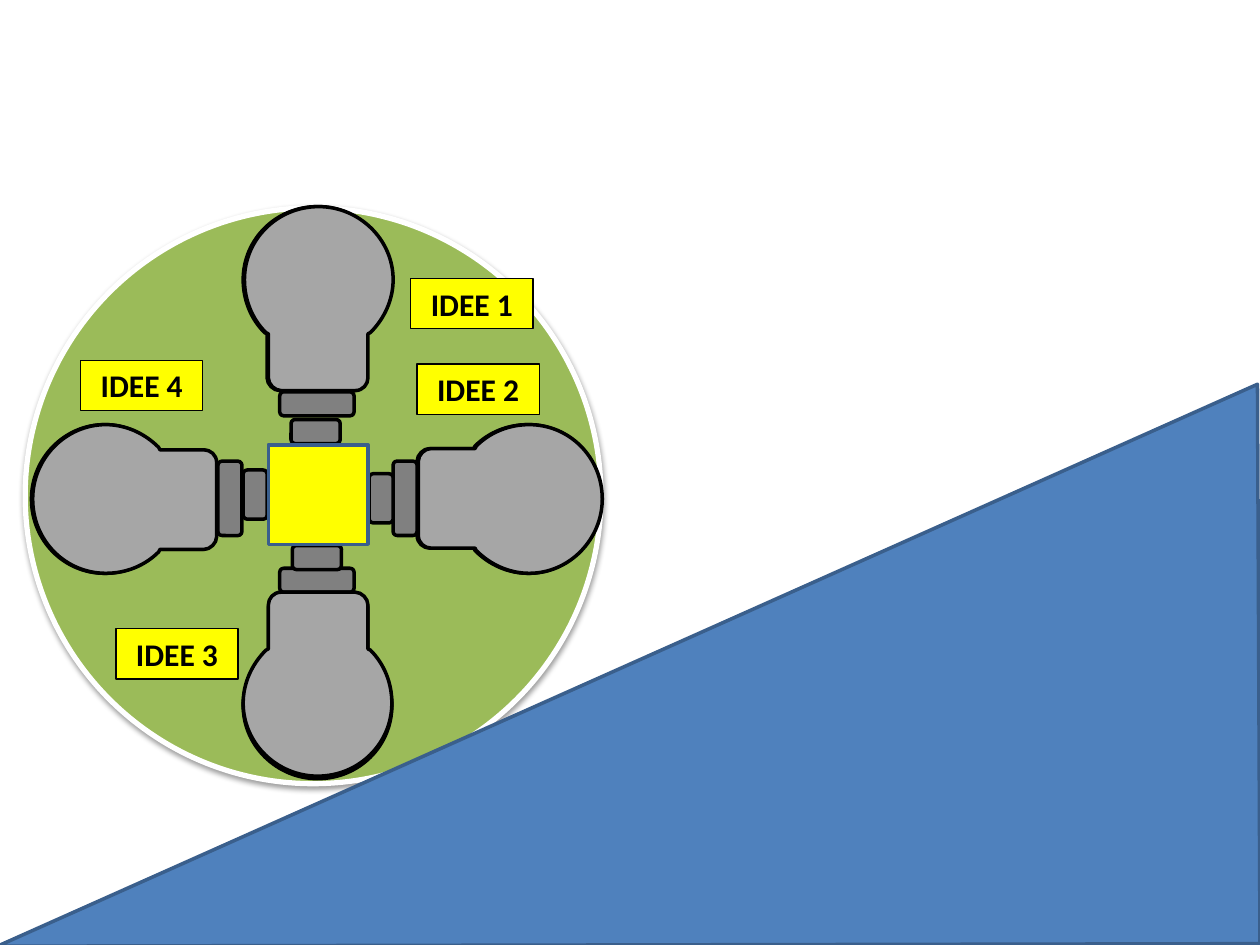
from lxml import etree
from pptx import Presentation
from pptx.dml.color import RGBColor
from pptx.enum.shapes import MSO_SHAPE
from pptx.enum.text import MSO_ANCHOR, MSO_AUTO_SIZE, PP_ALIGN
from pptx.oxml.ns import qn
from pptx.util import Inches, Pt

OVAL = MSO_SHAPE.OVAL
RECTANGLE = MSO_SHAPE.RECTANGLE
ROUNDED = MSO_SHAPE.ROUNDED_RECTANGLE
TOP = MSO_ANCHOR.TOP
GROW = MSO_AUTO_SIZE.SHAPE_TO_FIT_TEXT
CENTER = PP_ALIGN.CENTER

YELLOW = "FFFF00"
BLACK = "000000"
BLUE_EDGE = "3A5F8C"

BULB_START = (0.59, 0)
BULB_SEGMENTS = [
    [(0.91, 0), (1.18, 0.26), (1.18, 0.58)],
    [(1.18, 0.74), (1.11, 0.89), (1, 1)],
    [(0.98, 1.01)],
    [(0.98, 1.36)],
    [(0.98, 1.41), (0.94, 1.46), (0.88, 1.46)],
    [(0.29, 1.46)],
    [(0.24, 1.46), (0.19, 1.41), (0.19, 1.36)],
    [(0.19, 1.01)],
    [(0.17, 1)],
    [(0.06, 0.89), (0, 0.74), (0, 0.58)],
    [(0, 0.26), (0.26, 0), BULB_START],
]


def color(hex_value):
    return RGBColor.from_string(hex_value)


def paint(shape, fill, edge, width):
    shape.shadow.inherit = False
    shape.fill.solid()
    shape.fill.fore_color.rgb = color(fill)
    shape.line.color.rgb = color(edge)
    shape.line.width = Pt(width)
    return shape


def add_block(slide, preset, left, top, width, height, fill, edge, line_width):
    block = slide.shapes.add_shape(
        preset, Inches(left), Inches(top), Inches(width), Inches(height))
    return paint(block, fill, edge, line_width)


def add_outline(slide, start, segments, left, top, fill, edge, line_width):
    builder = slide.shapes.build_freeform(Inches(start[0]), Inches(start[1]))
    points = [(Inches(x), Inches(y)) for segment in segments for x, y in segment]
    builder.add_line_segments(points, close=True)
    outline = builder.convert_to_shape(Inches(left), Inches(top))
    steps = iter(list(outline._element.iter(qn("a:lnTo"))))
    for segment in segments:
        first, *others = [next(steps) for _ in segment]
        if others:
            first.tag = qn("a:cubicBezTo")
        for step in others:
            first.append(step[0])
            step.getparent().remove(step)
    return paint(outline, fill, edge, line_width)


def add_soft_shadow(shape):
    effects = shape._element.spPr.find(qn("a:effectLst"))
    shadow = etree.SubElement(
        effects, qn("a:outerShdw"), blurRad=str(Pt(3.1)), dist=str(Pt(1.6)),
        dir="5400000", rotWithShape="0")
    tint = etree.SubElement(shadow, qn("a:srgbClr"), val=BLACK)
    etree.SubElement(tint, qn("a:alpha"), val="38000")


def add_wheel(slide, left, top, size):
    wheel = add_block(slide, OVAL, left, top, size, size, "9BBB59", "FFFFFF", 3)
    add_soft_shadow(wheel)


def add_slope(slide, left, top, width, height):
    segments = [[(width, height - 0.02)], [(0, height)]]
    add_outline(slide, (width - 0.02, 0), segments, left, top,
                "4F81BD", BLUE_EDGE, 2)


def add_glass(slide, left, top, angle, fill):
    glass = add_outline(slide, BULB_START, BULB_SEGMENTS, left, top, fill, BLACK, 2)
    glass.rotation = angle


def add_socket(slide, left, top, width, angle):
    socket = add_block(slide, ROUNDED, left, top, width, 0.19, "808080", BLACK, 2)
    socket.rotation = angle


def add_lamps(slide, left, top):
    lamps = [
        (0, (1.74, -0.01), (-0.01, 0), (2.02, 1.46), (2.11, 1.68)),
        (90, (3.26, 1.58), (-0.01, 0), (2.72, 2.21), (2.63, 2.21)),
        (180, (1.73, 3.05), (0, 0.02), (2.02, 2.86), (2.12, 2.68)),
        (270, (0.2, 1.58), (-0.01, 0), (1.33, 2.21), (1.63, 2.18)),
    ]
    for angle, (x, y), (glow_x, glow_y), collar, tip in lamps:
        add_glass(slide, left + x + glow_x, top + y + glow_y, angle, YELLOW)
        for (socket_x, socket_y), width in [(collar, 0.59), (tip, 0.39)]:
            add_socket(slide, left + socket_x, top + socket_y, width, angle)
        add_glass(slide, left + x, top + y, angle, "A6A6A6")


def add_idea(slide, left, top, idea):
    label = add_block(slide, RECTANGLE, left, top, 0.97, 0.4, YELLOW, BLACK, 0.75)
    frame = label.text_frame
    frame.word_wrap = True
    frame.auto_size = GROW
    frame.vertical_anchor = TOP
    paragraph = frame.paragraphs[0]
    paragraph.text = idea
    paragraph.alignment = CENTER
    paragraph.font.name = "Calibri"
    paragraph.font.size = Pt(18)
    paragraph.font.bold = True
    paragraph.font.color.rgb = color(BLACK)


def add_ideas(slide, left, top):
    offsets = [(3.06, 0.56), (3.11, 1.24), (0.72, 3.34), (0.44, 1.21)]
    for number, (x, y) in enumerate(offsets, 1):
        add_idea(slide, left + x, top + y, f"IDEE {number}")


def add_hub(slide, left, top):
    add_block(slide, RECTANGLE, left + 1.93, top + 1.88, 0.79, 0.79,
              YELLOW, BLUE_EDGE, 2)


def main():
    presentation = Presentation()
    presentation.slide_width = Inches(10)
    presentation.slide_height = Inches(7.5)
    slide = presentation.slides.add_slide(presentation.slide_layouts[6])

    left, top, size = 0.2, 1.65, 4.57
    add_wheel(slide, left, top, size)
    add_slope(slide, -0.02, 3.05, 10.02, 4.46)
    add_lamps(slide, left, top)
    add_ideas(slide, left, top)
    add_hub(slide, left, top)
    presentation.save("out.pptx")


if __name__ == "__main__":
    main()
